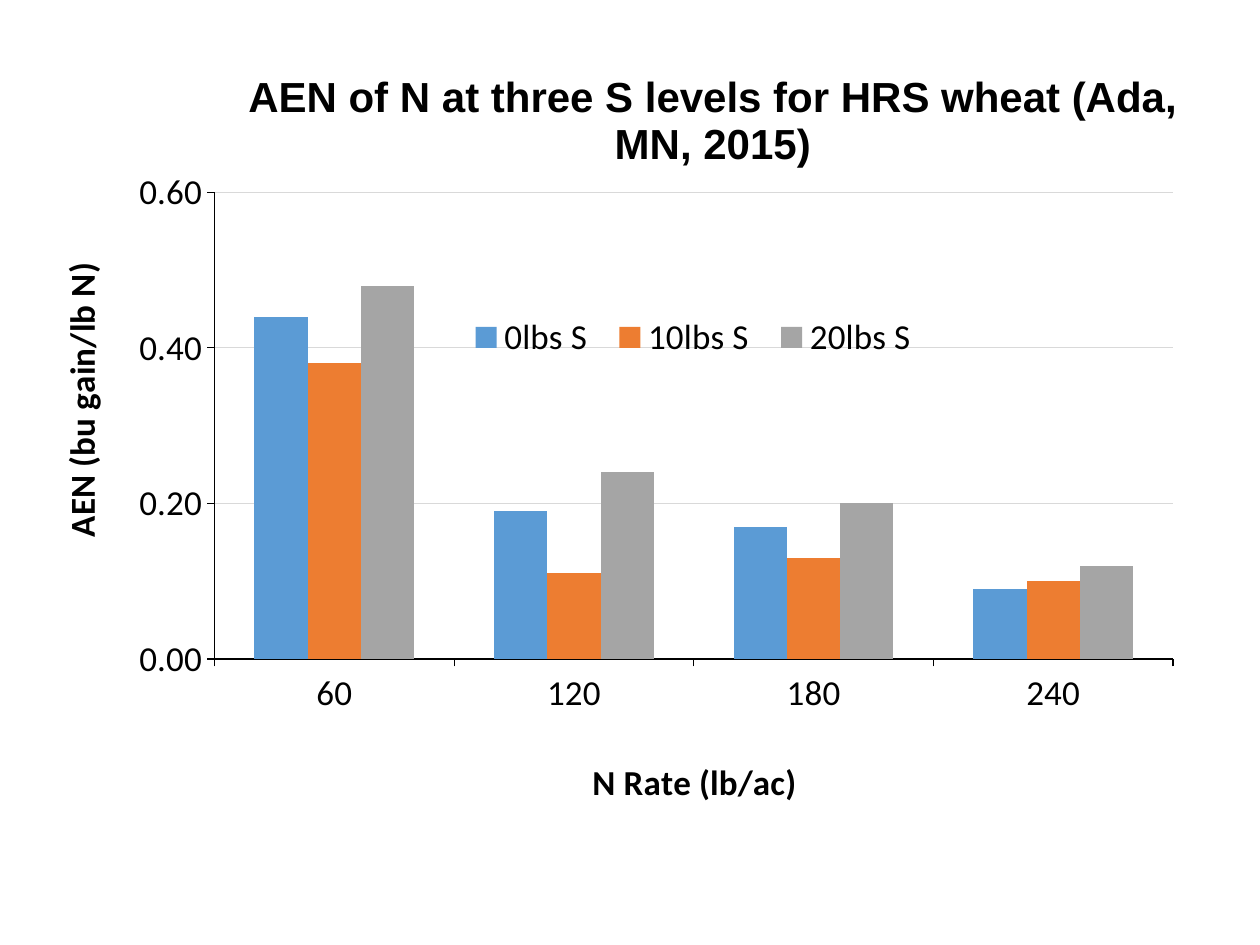
from lxml import etree
from pptx import Presentation
from pptx.chart.data import CategoryChartData
from pptx.dml.color import RGBColor
from pptx.enum.chart import XL_CHART_TYPE, XL_LEGEND_POSITION, XL_TICK_MARK
from pptx.oxml.ns import qn
from pptx.util import Inches, Pt

COLUMNS = XL_CHART_TYPE.COLUMN_CLUSTERED
BOTTOM = XL_LEGEND_POSITION.BOTTOM
OUTSIDE, NO_TICK = XL_TICK_MARK.OUTSIDE, XL_TICK_MARK.NONE
BLACK = RGBColor(0x00, 0x00, 0x00)
GRID = RGBColor(0xD9, 0xD9, 0xD9)
BLUE = RGBColor(0x5B, 0x9B, 0xD5)
ORANGE = RGBColor(0xED, 0x7D, 0x31)
GRAY = RGBColor(0xA5, 0xA5, 0xA5)


def add_title(title, text, size=20, font="Calibri"):
    tf = title.text_frame
    r = tf.paragraphs[0].add_run()
    r.text = text
    r.font.size, r.font.name, r.font.bold = Pt(size), font, True
    r.font.color.rgb = BLACK
    return tf


def place(parent, index, **fractions):
    """Give a chart part a manual layout, in fractions of the chart."""
    for old in parent.findall(qn("c:layout")):
        parent.remove(old)
    layout = etree.Element(qn("c:layout"))
    manual = etree.SubElement(layout, qn("c:manualLayout"))
    if parent.tag == qn("c:plotArea"):
        etree.SubElement(manual, qn("c:layoutTarget")).set("val", "inner")
    for side in ("x", "y"):
        etree.SubElement(manual, qn(f"c:{side}Mode")).set("val", "edge")
    for key, value in fractions.items():
        etree.SubElement(manual, qn(f"c:{key}")).set("val", str(value))
    parent.insert(index, layout)


prs = Presentation()
prs.slide_width, prs.slide_height = Inches(10), Inches(7.5)
s = prs.slides.add_slide(prs.slide_layouts[6])

# Data
data = CategoryChartData(number_format="0.00")
data.categories = ["60", "120", "180", "240"]
data.add_series("0lbs S", (0.44, 0.19, 0.17, 0.09))
data.add_series("10lbs S", (0.38, 0.11, 0.13, 0.1))
data.add_series("20lbs S", (0.48, 0.24, 0.2, 0.12))

# Chart
chart = s.shapes.add_chart(COLUMNS, Inches(0.21), Inches(0.17),
                           Inches(9.45), Inches(6.43), data).chart
chart.font.size, chart.font.name = Pt(20), "Calibri"
chart.font.color.rgb = BLACK
plot = chart.plots[0]
plot.gap_width, plot.overlap, plot.vary_by_categories = 150, 0, False
for series, color in zip(plot.series, (BLUE, ORANGE, GRAY)):
    series.format.fill.solid()
    series.format.fill.fore_color.rgb = color

# Axes
cat_axis, val_axis = chart.category_axis, chart.value_axis
for axis in (cat_axis, val_axis):
    axis.major_tick_mark, axis.minor_tick_mark = OUTSIDE, NO_TICK
    axis.format.line.color.rgb = BLACK
    axis.format.line.width = Pt(0.75)
val_axis.minimum_scale, val_axis.maximum_scale, val_axis.major_unit = 0, 0.6, 0.2
val_axis.tick_labels.number_format = "0.00"
val_axis.tick_labels.number_format_is_linked = False
val_axis.major_gridlines.format.line.color.rgb = GRID
val_axis.major_gridlines.format.line.width = Pt(0.75)

# Titles
add_title(chart.chart_title, "AEN of N at three S levels for HRS wheat (Ada, MN, 2015)",
          size=24, font="Arial")
add_title(cat_axis.axis_title, "N Rate (lb/ac)")
tf = add_title(val_axis.axis_title, "AEN (bu gain/lb N)")
body = tf._txBody.find(qn("a:bodyPr"))
body.set("rot", "-5400000")
body.set("vert", "horz")

# Legend over the plot
chart.has_legend = True
chart.legend.position = BOTTOM
chart.legend.include_in_layout = False
chart.legend.font.size, chart.legend.font.name = Pt(20), "Calibri"
chart.legend.font.color.rgb = BLACK

# Positions inside the chart
place(plot._element.getparent(), 0, x=0.158, y=0.211, w=0.805, h=0.576)
place(chart.chart_title._element, 1, x=0.18, y=0.05)
place(cat_axis.axis_title._element, 1, x=0.47, y=0.9)
place(val_axis.axis_title._element, 1, x=0.02, y=0.29)
place(chart.legend._element, 1, x=0.36, y=0.35, w=0.4, h=0.08)

prs.save("out.pptx")
